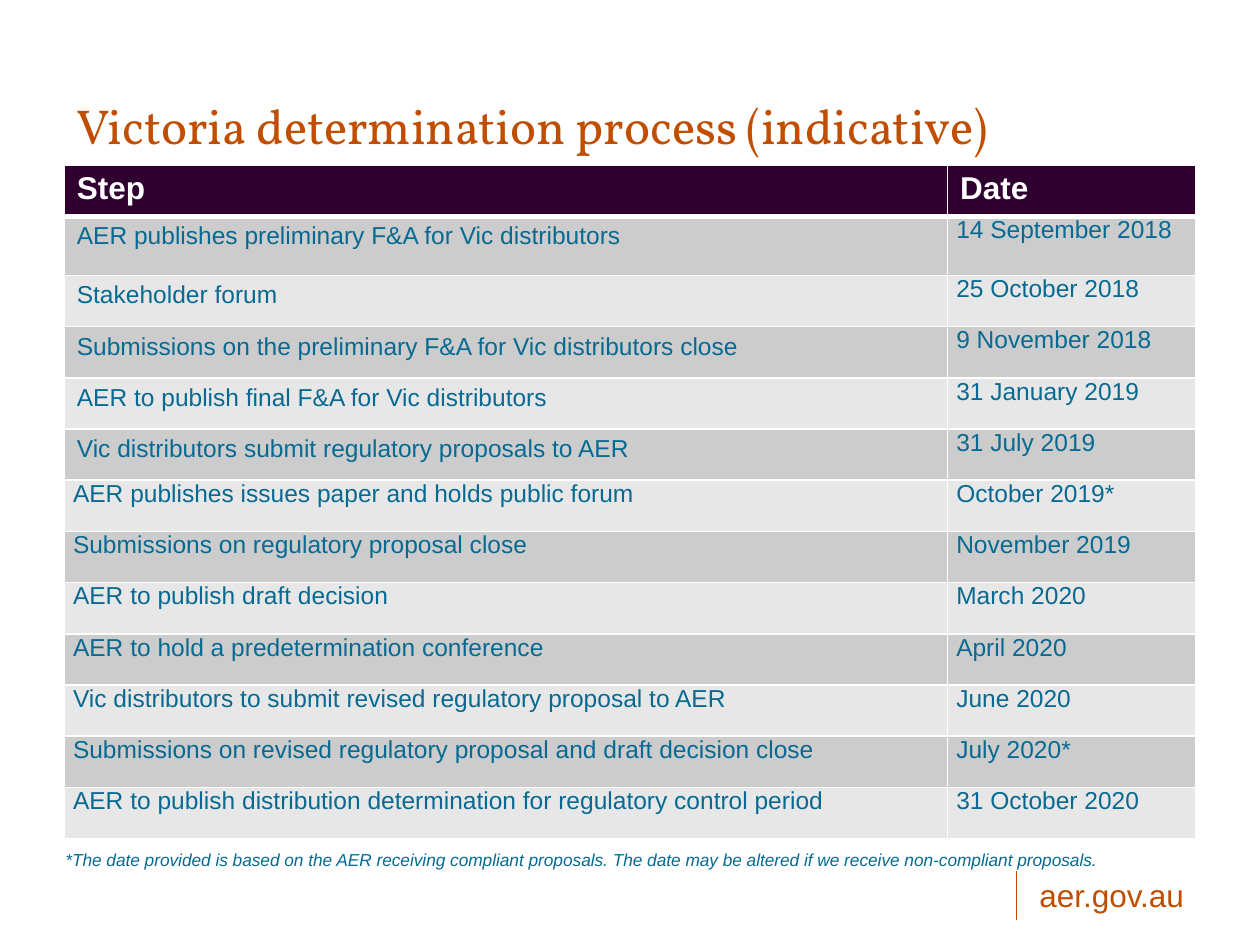
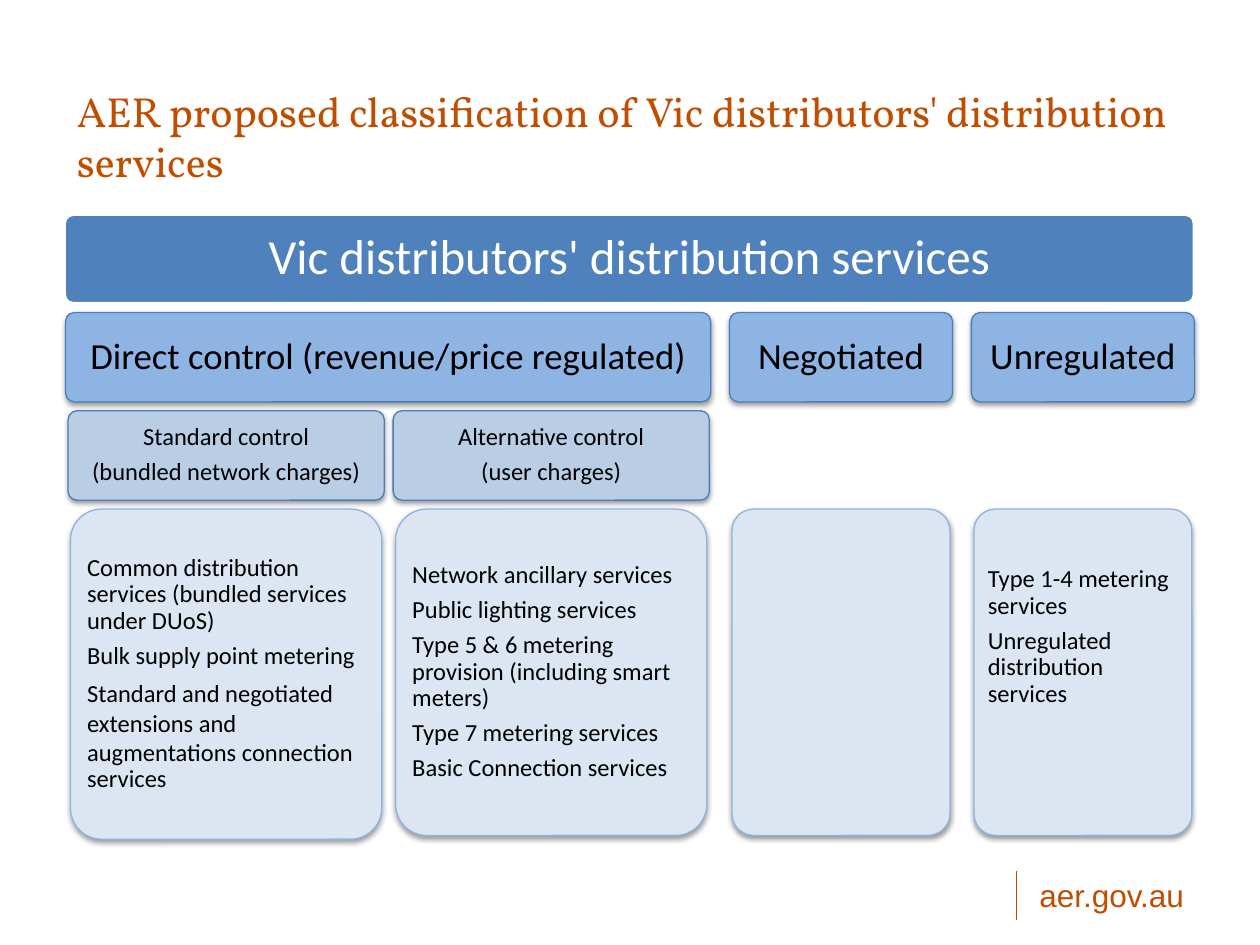
from pptx import Presentation
from pptx.dml.color import RGBColor
from pptx.enum.shapes import MSO_CONNECTOR as Link, MSO_SHAPE as Shape
from pptx.enum.text import MSO_ANCHOR as Anchor, MSO_AUTO_SIZE as Fit, PP_ALIGN as Align
from pptx.oxml import parse_xml
from pptx.oxml.ns import nsdecls
from pptx.util import Inches, Pt

COLORS = {
    "title": "C14E00", "rule": "BD4C00", "text": "076A92", "head": "2F002F",
    "odd": "CDCCCD", "even": "E8E7E8", "white": "FFFFFF", "black": "000000",
    "banner": "4F81BD", "group": "8EB4E3", "control": "B9CDE5",
    "panel": "DCE6F2", "edge": "4B7EBC",
}

STEPS = [
    ("AER publishes preliminary F&A for Vic distributors", "14 September 2018"),
    ("Stakeholder forum", "25 October 2018"),
    ("Submissions on the preliminary F&A for Vic distributors close", "9 November 2018"),
    ("AER to publish final F&A for Vic distributors", "31 January 2019"),
    ("Vic distributors submit regulatory proposals to AER", "31 July 2019"),
    ("AER publishes issues paper and holds public forum", "October 2019*"),
    ("Submissions on regulatory proposal close", "November 2019"),
    ("AER to publish draft decision", "March 2020"),
    ("AER to hold a predetermination conference", "April 2020"),
    ("Vic distributors to submit revised regulatory proposal to AER", "June 2020"),
    ("Submissions on revised regulatory proposal and draft decision close", "July 2020*"),
    ("AER to publish distribution determination for regulatory control period",
     "31 October 2020"),
]
NOTE = ("*The date provided is based on the AER receiving compliant proposals. "
        "The date may be altered if we receive non-compliant proposals.")

LOOSE = "Standard and negotiated extensions and augmentations connection"
# left, width, services, extra space under the text
PANELS = [
    (0.56, 2.47, ["Common distribution services (bundled services under DUoS)",
                  "Bulk supply point metering", LOOSE, "services"], 0),
    (3.14, 2.47, ["Network ancillary services", "Public lighting services",
                  "Type 5 & 6 metering provision (including smart meters)",
                  "Type 7 metering services", "Basic Connection services"], 0),
    (5.81, 1.73, [], 0),
    (7.73, 1.73, ["Type 1-4 metering services",
                  "Unregulated distribution services"], 0.56),
]
GROUPS = [
    (0.52, 5.12, "Direct control (revenue/price regulated)"),
    (5.79, 1.77, "Negotiated"),
    (7.71, 1.77, "Unregulated"),
]
CONTROLS = [
    (0.54, 2.51, ["Standard control", "(bundled network charges)"]),
    (3.12, 2.51, ["Alternative control", "(user charges)"]),
]


def rgb(name):
    return RGBColor.from_string(COLORS[name])


def add_run(para, text, size, color, face="Arial", bold=False, italic=False):
    run = para.add_run()
    run.text = text
    font = run.font
    font.name, font.size = face, Pt(size)
    font.bold, font.italic = bold, italic
    font.color.rgb = rgb(color)


def set_insets(item, side, top, low=None):
    """Set the margins of a text frame or a table cell."""
    item.margin_left = item.margin_right = Inches(side)
    item.margin_top = Inches(top)
    item.margin_bottom = Inches(top if low is None else low)


def add_text(slide, box, text, size, color, italic=False):
    frame = slide.shapes.add_textbox(*map(Inches, box)).text_frame
    frame.word_wrap = True
    add_run(frame.paragraphs[0], text, size, color, italic=italic)


def add_footer(slide):
    rule = slide.shapes.add_connector(
        Link.STRAIGHT, Inches(8.07), Inches(6.91), Inches(8.07), Inches(7.3))
    rule.line.color.rgb = rgb("rule")
    rule.line.width = Pt(0.75)
    rule._element.spPr.append(parse_xml(f"<a:effectLst {nsdecls('a')}/>"))
    add_text(slide, (8.15, 6.9, 1.57, 0.4), "aer.gov.au", 18, "title")


def add_page(deck, title, size, height):
    """Add a slide with its title and the shared footer."""
    slide = deck.slides.add_slide(deck.slide_layouts[5])
    add_footer(slide)
    head = slide.shapes.title
    head.left, head.top = Inches(0.51), Inches(0.6)
    head.width, head.height = Inches(8.98), Inches(height)
    frame = head.text_frame
    frame.auto_size, frame.vertical_anchor = Fit.NONE, Anchor.MIDDLE
    para = frame.paragraphs[0]
    para.alignment = Align.LEFT
    add_run(para, title, size, "title", "Vollkorn")
    return slide


def set_edges(cell, **widths):
    """Draw white cell borders; the keys are L, R, T and B."""
    props = cell._tc.get_or_add_tcPr()
    for spot, side in enumerate("LRTB"):
        width = Pt(widths.get(side, 1))
        props.insert(spot, parse_xml(
            f'<a:ln{side} {nsdecls("a")} w="{width}"><a:solidFill>'
            f'<a:srgbClr val="{COLORS["white"]}"/></a:solidFill></a:ln{side}>'))


def fill_cell(cell, text, size, color, fill, bold=False):
    cell.fill.solid()
    cell.fill.fore_color.rgb = rgb(fill)
    add_run(cell.text_frame.paragraphs[0], text, size, color, bold=bold)


def add_steps(slide):
    table = slide.shapes.add_table(
        len(STEPS) + 1, 2, Inches(0.51), Inches(1.31), Inches(8.98), Inches(5.35)).table
    table.first_row = table.horz_banding = False
    for col, width in zip(table.columns, (7.01, 1.97)):
        col.width = Inches(width)
    for row in table.rows:
        row.height = Inches((5.35 - 0.47) / len(STEPS))
    table.rows[1].height = Inches(0.47)

    for col, text in enumerate(("Step", "Date")):
        cell = table.cell(0, col)
        fill_cell(cell, text, 18, "white", "head", bold=True)
        set_edges(cell, B=3)
    for row, step in enumerate(STEPS, 1):
        for col, text in enumerate(step):
            cell = table.cell(row, col)
            fill_cell(cell, text, 14, "text", "odd" if row % 2 else "even")
            set_edges(cell, T=3 if row == 1 else 1)
            if col == 1 or row > 5:
                set_insets(cell, 0.07, 0)


def add_shadow(shape):
    shape._element.spPr.append(parse_xml(
        f'<a:effectLst {nsdecls("a")}><a:outerShdw blurRad="{Pt(3.1)}" '
        f'dist="{Pt(1.6)}" dir="5400000" rotWithShape="0">'
        f'<a:srgbClr val="{COLORS["black"]}"><a:alpha val="38000"/></a:srgbClr>'
        '</a:outerShdw></a:effectLst>'))


def add_card(slide, level, left, width, lines, fill, size, inset, height=0.71,
             edge="edge", weight=0.75, color="black", align=Align.CENTER,
             shade=True, extra=0):
    """Add a rounded box on one of the four levels of the chart."""
    top = 1.7 + 0.78 * level
    card = slide.shapes.add_shape(
        Shape.ROUNDED_RECTANGLE, *map(Inches, (left, top, width, height)))
    card.adjustments[0] = 0.1
    card.fill.solid()
    card.fill.fore_color.rgb = rgb(fill)
    card.line.color.rgb = rgb(edge)
    card.line.width = Pt(weight)
    if shade:
        add_shadow(card)
    else:
        card.shadow.inherit = False

    frame = card.text_frame
    frame.word_wrap, frame.vertical_anchor = True, Anchor.MIDDLE
    set_insets(frame, inset, inset, inset + extra)
    for spot, line in enumerate(lines):
        para = frame.add_paragraph() if spot else frame.paragraphs[0]
        para.alignment = align
        if line != LOOSE:
            para.line_spacing = 0.9
            para.space_after = Pt(size * 0.35)
        add_run(para, line, size, color, "Calibri")


def add_classes(slide):
    add_card(slide, 0, 0.51, 8.97, ["Vic distributors' distribution services"],
             "banner", 28, 0.12, edge="white", weight=2, color="white", shade=False)
    for left, width, text in GROUPS:
        add_card(slide, 1, left, width, [text], "group", 21, 0.09)
    for left, width, lines in CONTROLS:
        add_card(slide, 2, left, width, lines, "control", 14, 0.06)
    for spot, (left, width, lines, extra) in enumerate(PANELS):
        add_card(slide, 3, left, width, lines, "panel", 14, 0.06,
                 height=2.59 if spot else 2.62, edge="group",
                 align=Align.LEFT, extra=extra)


def main():
    deck = Presentation()
    deck.slide_width, deck.slide_height = Inches(10), Inches(7.5)

    slide = add_page(deck, "Victoria determination process (indicative)", 28, 0.79)
    add_steps(slide)
    add_text(slide, (0.42, 6.69, 8.98, 0.24), NOTE, 9.9, "text", italic=True)

    slide = add_page(
        deck, "AER proposed classification of Vic distributors' distribution services",
        24, 0.95)
    add_classes(slide)
    deck.save("out.pptx")


if __name__ == "__main__":
    main()
